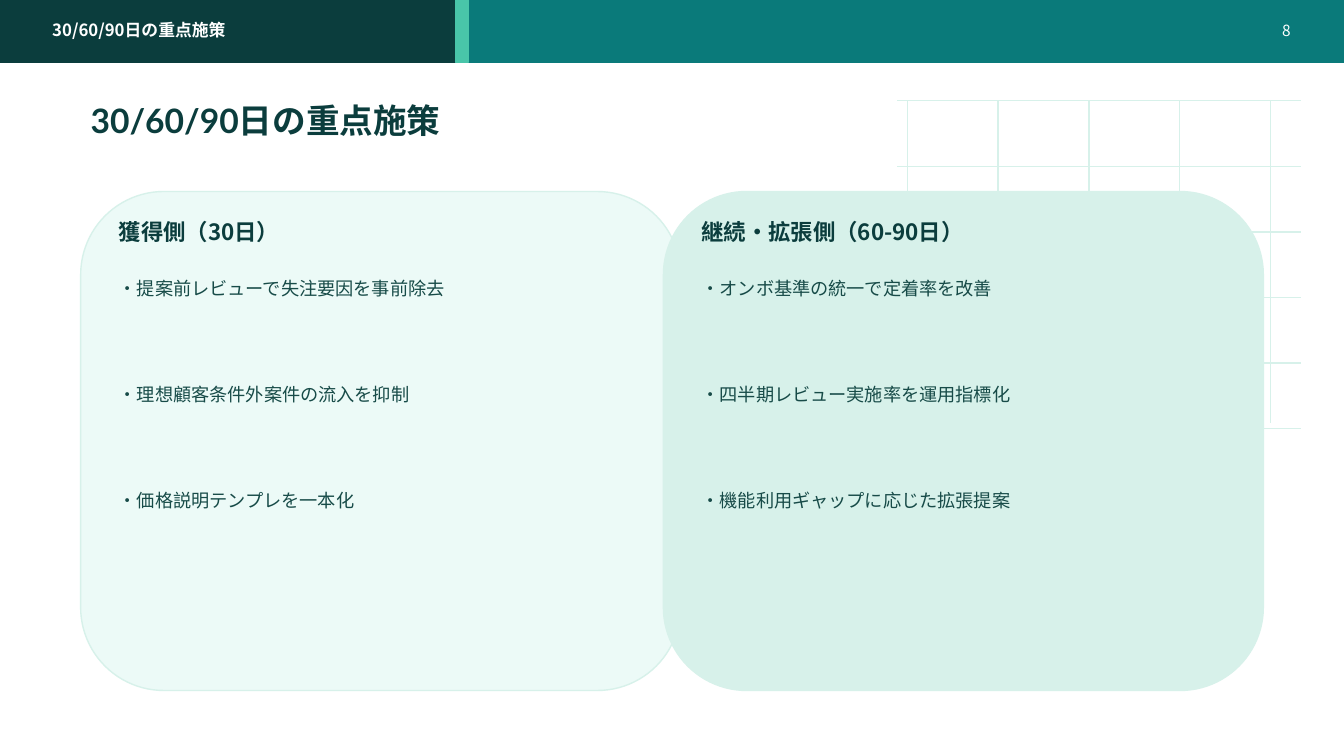
"""Build the 30/60/90-day priority actions slide."""
from dataclasses import dataclass

from lxml import etree
from pptx import Presentation
from pptx.dml.color import RGBColor
from pptx.enum.shapes import MSO_CONNECTOR, MSO_SHAPE
from pptx.enum.text import MSO_ANCHOR, PP_ALIGN
from pptx.oxml.ns import qn
from pptx.slide import Slide
from pptx.util import Inches, Pt

STRAIGHT = MSO_CONNECTOR.STRAIGHT
RECTANGLE = MSO_SHAPE.RECTANGLE
ROUNDED = MSO_SHAPE.ROUNDED_RECTANGLE
TOP, MIDDLE = MSO_ANCHOR.TOP, MSO_ANCHOR.MIDDLE
LEFT, RIGHT = PP_ALIGN.LEFT, PP_ALIGN.RIGHT

COLORS = {
    "white": "FFFFFF",
    "teal": "0A7A7A",
    "dark": "0B3D3D",
    "accent": "49C5A9",
    "mint": "D7F1EA",
    "pale": "ECFAF7",
    "body": "174B48",
}
JAPANESE_FONT = "Noto Sans CJK JP"
TITLE_FONT = "Lato"
TITLE = "30/60/90日の重点施策"


@dataclass(frozen=True)
class Area:
    left: float
    top: float
    width: float
    height: float

    def lengths(self) -> tuple:
        return tuple(Inches(v) for v in (self.left, self.top, self.width, self.height))


@dataclass(frozen=True)
class Band:
    area: Area
    color: str


@dataclass(frozen=True)
class Card:
    left: float
    fill: str
    heading: str
    actions: tuple[str, ...]


BANDS = (
    Band(Area(0, 0, 13.33, 0.62), "teal"),
    Band(Area(0, 0, 4.6, 0.62), "dark"),
    Band(Area(4.52, 0, 0.12, 0.62), "accent"),
)
CARDS = (
    Card(0.8, "pale", "獲得側（30日）", (
        "・提案前レビューで失注要因を事前除去",
        "・理想顧客条件外案件の流入を抑制",
        "・価格説明テンプレを一本化",
    )),
    Card(6.58, "mint", "継続・拡張側（60-90日）", (
        "・オンボ基準の統一で定着率を改善",
        "・四半期レビュー実施率を運用指標化",
        "・機能利用ギャップに応じた拡張提案",
    )),
)


def rgb(name: str) -> RGBColor:
    return RGBColor.from_string(COLORS[name])


def add_rule(page: Slide, x1: float, y1: float, x2: float, y2: float) -> None:
    rule = page.shapes.add_connector(
        STRAIGHT, Inches(x1), Inches(y1), Inches(x2), Inches(y2))
    rule.line.color.rgb = rgb("mint")
    rule.line.width = Pt(1)
    etree.SubElement(rule.element.spPr, qn("a:effectLst"))


def add_panel(page: Slide, kind: MSO_SHAPE, area: Area, fill: str, line: str) -> None:
    panel = page.shapes.add_shape(kind, *area.lengths())
    panel.shadow.inherit = False
    panel.fill.solid()
    panel.fill.fore_color.rgb = rgb(fill)
    panel.line.color.rgb = rgb(line)
    panel.line.width = Pt(1)


def add_text(page: Slide, text: str, area: Area, *, size: float, color: str,
             bold: bool = False, font: str = JAPANESE_FONT,
             align: PP_ALIGN = LEFT, anchor: MSO_ANCHOR = MIDDLE) -> None:
    frame = page.shapes.add_textbox(*area.lengths()).text_frame
    frame.word_wrap = True
    frame.vertical_anchor = anchor
    para = frame.paragraphs[0]
    para.alignment = align
    span = para.add_run()
    span.text = text
    span.font.size = Pt(size)
    span.font.bold = bold
    span.font.name = font
    span.font.color.rgb = rgb(color)
    east_asian = etree.SubElement(span.font._element, qn("a:ea"))
    east_asian.set("typeface", JAPANESE_FONT)


def add_grid(page: Slide) -> None:
    for row in range(6):
        y = 1 + 0.65 * row
        add_rule(page, 8.9, y, 12.9, y)
    for column in range(5):
        x = 9 + 0.9 * column
        add_rule(page, x, 1, x, 4.2)


def add_card_text(page: Slide, card: Card) -> None:
    left = card.left + 0.28
    add_text(page, card.heading, Area(left, 2.15, 5.2, 0.3),
             size=16, color="dark", bold=True)
    for index, action in enumerate(card.actions):
        add_text(page, action, Area(left, 2.7 + 1.05 * index, 5.25, 0.82),
                 size=13, color="body", anchor=TOP)


def main() -> None:
    deck = Presentation()
    deck.slide_width, deck.slide_height = Inches(13.33), Inches(7.5)
    page = deck.slides.add_slide(deck.slide_layouts[6])
    add_grid(page)
    for band in BANDS:
        add_panel(page, RECTANGLE, band.area, band.color, band.color)
    add_text(page, TITLE, Area(0.42, 0.17, 8.8, 0.26),
             size=12, color="white", bold=True)
    add_text(page, "8", Area(12.15, 0.17, 0.75, 0.26),
             size=11, color="white", align=RIGHT)
    add_text(page, TITLE, Area(0.8, 0.95, 11.4, 0.48),
             size=24, color="dark", bold=True, font=TITLE_FONT)
    for card in CARDS:
        add_panel(page, ROUNDED, Area(card.left, 1.9, 5.95, 4.95), card.fill, "mint")
    for card in CARDS:
        add_card_text(page, card)
    deck.save("out.pptx")


if __name__ == "__main__":
    main()
